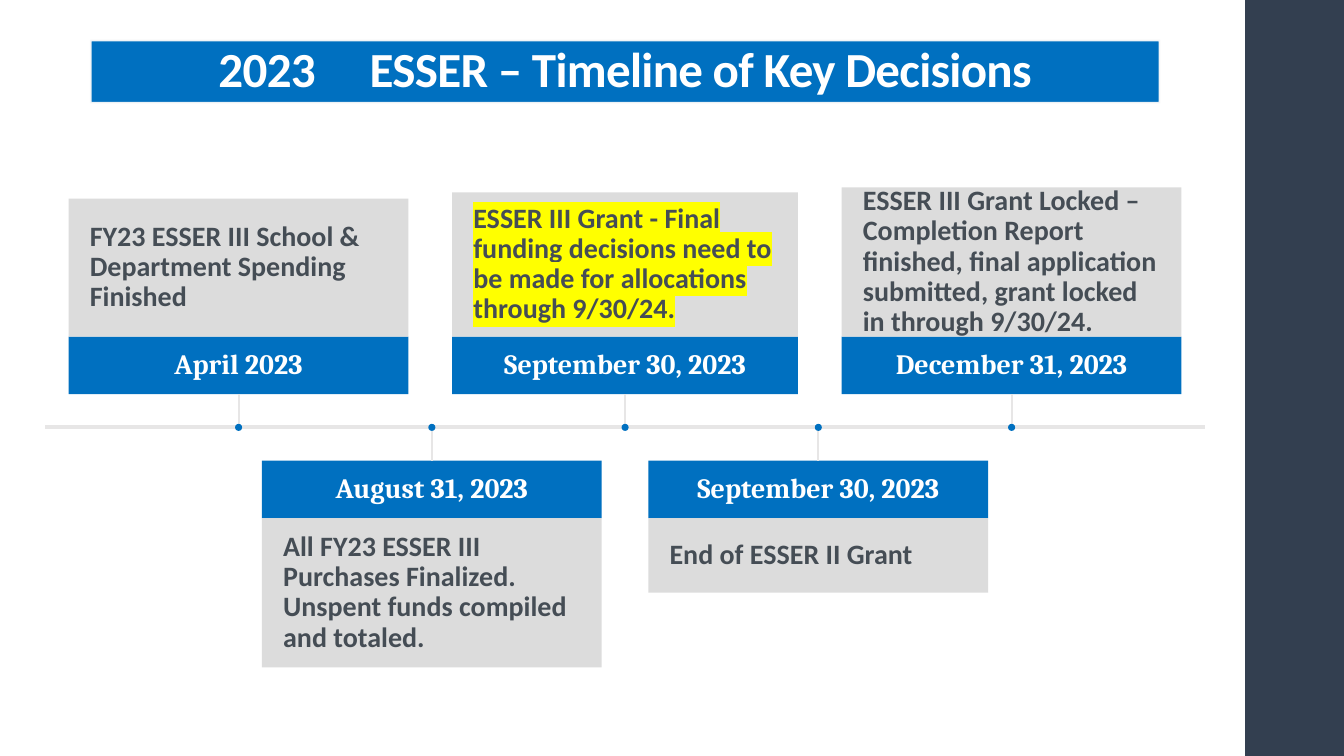
from lxml import etree
from pptx import Presentation
from pptx.dml.color import RGBColor
from pptx.enum.shapes import MSO_CONNECTOR, MSO_SHAPE
from pptx.enum.text import MSO_ANCHOR, MSO_AUTO_SIZE, PP_ALIGN
from pptx.oxml.ns import qn
from pptx.util import Pt

RECTANGLE, OVAL = MSO_SHAPE.RECTANGLE, MSO_SHAPE.OVAL
STRAIGHT = MSO_CONNECTOR.STRAIGHT
LEFT, CENTER = PP_ALIGN.LEFT, PP_ALIGN.CENTER
MIDDLE, BOTTOM = MSO_ANCHOR.MIDDLE, MSO_ANCHOR.BOTTOM
NO_AUTOFIT = MSO_AUTO_SIZE.NONE
EMU_PER_PX = 9144
TITLE_ONLY = 5
CARD_WIDTH, DATE_HEIGHT, STEM, DOT = 337, 57, 33, 7
COLORS = {
    "blue": "0070C0",
    "navy": "333F50",
    "gray": "D9D9D9",
    "rule": "E7E6E6",
    "edge": "F9F9F9",
    "text": "454D55",
    "white": "FFFFFF",
    "yellow": "FFFF00",
}
EVENTS = [
    {"date": "April 2023", "height": 137,
     "text": "FY23 ESSER III School & Department Spending Finished"},
    {"date": "August 31, 2023", "height": 148,
     "text": "All FY23 ESSER III Purchases Finalized. Unspent funds compiled and totaled."},
    {"date": "September 30, 2023", "height": 143, "width": 343, "highlight": True,
     "text": "ESSER III Grant - Final funding decisions need to be made for allocations through 9/30/24."},
    {"date": "September 30, 2023", "height": 74,
     "text": "End of ESSER II Grant"},
    {"date": "December 31, 2023", "height": 148,
     "text": "ESSER III Grant Locked – Completion Report finished, final application submitted, "
             "grant locked in through 9/30/24."},
]


def px(length):
    """Convert a length in px to EMU."""
    return round(length * EMU_PER_PX)


def rgb(name):
    """Return a named colour."""
    return RGBColor.from_string(COLORS[name])


def set_alpha(properties, percent):
    """Set the opacity of the first colour found in the properties."""
    color = next(properties.iter(qn("a:srgbClr")))
    etree.SubElement(color, qn("a:alpha")).set("val", str(percent * 1000))


def add_block(slide, kind, box, color):
    """Add a filled shape without an outline or shadow."""
    shape = slide.shapes.add_shape(kind, *map(px, box))
    shape.shadow.inherit = False
    shape.fill.solid()
    shape.fill.fore_color.rgb = rgb(color)
    shape.line.fill.background()
    return shape


def add_line(slide, start, end, width):
    """Add a straight rule without a shadow."""
    line = slide.shapes.add_connector(STRAIGHT, *map(px, (*start, *end)))
    line.line.color.rgb = rgb("rule")
    line.line.width = Pt(width)
    etree.SubElement(line._element.spPr, qn("a:effectLst"))
    return line


def write(shape, text, font, size, color, align, anchor, inset, spacing):
    """Write one bold paragraph in a shape and return its run."""
    frame = shape.text_frame
    frame.text = text
    frame.word_wrap = True
    frame.auto_size = NO_AUTOFIT
    frame.vertical_anchor = anchor
    frame.margin_left = frame.margin_right = px(inset)
    frame.margin_top = frame.margin_bottom = px(min(inset, 5))
    paragraph = frame.paragraphs[0]
    paragraph.alignment = align
    paragraph.line_spacing = spacing
    run = paragraph.runs[0]
    run.font.name = font
    run.font.size = Pt(size)
    run.font.bold = True
    run.font.color.rgb = rgb(color)
    return run


def highlight(run):
    """Mark a run in yellow."""
    properties = run.font._element
    mark = etree.Element(qn("a:highlight"))
    etree.SubElement(mark, qn("a:srgbClr")).set("val", COLORS["yellow"])
    properties.find(qn("a:solidFill")).addnext(mark)


def add_title(slide, box):
    """Place and format the title banner."""
    title = slide.shapes.title
    title.left, title.top, title.width, title.height = map(px, box)
    title.fill.solid()
    title.fill.fore_color.rgb = rgb("blue")
    title.line.color.rgb = rgb("edge")
    title.line.width = Pt(1.35)
    set_alpha(title.line._ln, 95)
    run = write(title, "2023\t\tESSER – Timeline of Key Decisions",
                "Calibri", 35, "white", CENTER, BOTTOM, 10, 0.85)
    run.font._element.set("spc", "-50")


def add_event(slide, center, axis, event, above):
    """Add a dated card, its stem and its dot on the axis."""
    width = event.get("width", CARD_WIDTH)
    left = center - width / 2
    if above:
        date_top = axis - STEM - DATE_HEIGHT
        body_top = date_top - event["height"]
    else:
        date_top = axis + STEM
        body_top = date_top + DATE_HEIGHT
    date = add_block(slide, RECTANGLE, (left, date_top, width, DATE_HEIGHT), "blue")
    write(date, event["date"], "Cambria", 20, "white", CENTER, MIDDLE, 11, 0.9)
    body = add_block(slide, RECTANGLE, (left, body_top, width, event["height"]), "gray")
    set_alpha(body._element.spPr, 90)
    run = write(body, event["text"], "Calibri", 20, "text", LEFT, MIDDLE, 21, 0.9)
    if event.get("highlight"):
        highlight(run)
    stem = add_line(slide, (center, axis), (center, axis), 1.5)
    stem.begin_connect(date, 2 if above else 0)
    add_block(slide, OVAL, (center - DOT / 2, axis - DOT / 2, DOT, DOT), "blue")


def add_timeline(slide, left, axis, width):
    """Space the events evenly, alternately above and below the axis."""
    add_line(slide, (left, axis), (left + width, axis), 3)
    step = width / (len(EVENTS) + 1)
    for index, event in enumerate(EVENTS):
        add_event(slide, left + step * (index + 1), axis, event, index % 2 == 0)


def main():
    """Build and save the timeline slide."""
    presentation = Presentation()
    presentation.slide_width, presentation.slide_height = px(1333), px(750)
    slide = presentation.slides.add_slide(presentation.slide_layouts[TITLE_ONLY])
    add_block(slide, RECTANGLE, (1235, 0, 98, 750), "navy")
    add_title(slide, (90, 40, 1060, 62))
    add_timeline(slide, 45, 424, 1150)
    presentation.save("out.pptx")


if __name__ == "__main__":
    main()
